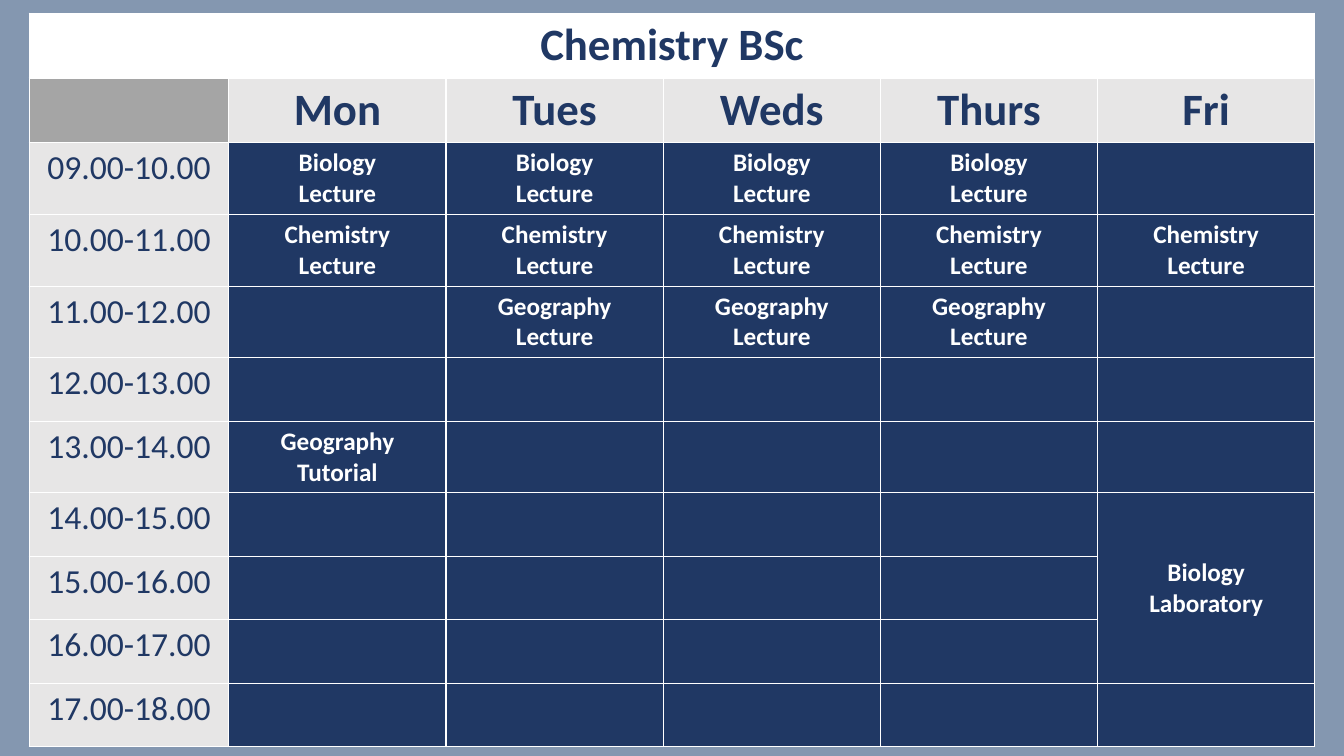
from lxml import etree
from pptx import Presentation
from pptx.dml.color import RGBColor
from pptx.enum.text import MSO_ANCHOR, PP_ALIGN
from pptx.oxml.ns import qn
from pptx.util import Inches, Pt

CENTER = PP_ALIGN.CENTER
MIDDLE = MSO_ANCHOR.MIDDLE
NAVY = RGBColor(0x20, 0x38, 0x64)
WHITE = RGBColor(0xFF, 0xFF, 0xFF)
PALE = RGBColor(0xE7, 0xE6, 0xE6)
GRAY = RGBColor(0xA5, 0xA5, 0xA5)
SLATE = RGBColor(0x84, 0x97, 0xB0)

HEAD = {"size": Pt(32), "bold": True, "color": NAVY}
HOUR = {"size": Pt(24), "bold": False, "color": NAVY}
ITEM = {"size": Pt(18), "bold": True, "color": WHITE}

DAYS = ["Mon", "Tues", "Weds", "Thurs", "Fri"]
START, END = 9, 18
ITEMS = [
    (9, "Biology\nLecture", DAYS[:4]),
    (10, "Chemistry\nLecture", DAYS),
    (11, "Geography\nLecture", DAYS[1:4]),
    (13, "Geography\nTutorial", ["Mon"]),
    (14, "Biology\nLaboratory", ["Fri"]),
]


class Deck:
    """Holds the style and the current slide."""

    def __init__(self, font, back):
        self.font = font
        self.prs = Presentation()
        self.prs.slide_width = Inches(13.33)
        self.prs.slide_height = Inches(7.5)
        self.slide = self.prs.slides.add_slide(self.prs.slide_layouts[6])
        fill = self.slide.background.fill
        fill.solid()
        fill.fore_color.rgb = back

    def table(self, box, cols, rows):
        frame = self.slide.shapes.add_table(len(rows), len(cols), *map(Inches, box))
        grid = frame.table
        grid.first_row = grid.horz_banding = False
        for col, wide in zip(grid.columns, cols):
            col.width = Inches(wide)
        for row, high in zip(grid.rows, rows):
            row.height = Inches(high)
        return grid

    def cell(self, cell, fill, text="", style=ITEM):
        self.border(cell)
        cell.fill.solid()
        cell.fill.fore_color.rgb = fill
        if text:
            cell.text = text
        for para in cell.text_frame.paragraphs:
            para.alignment = CENTER
            for run in para.runs:
                self.format(run.font, style)

    def format(self, font, style):
        font.name = self.font
        for key, value in style.items():
            if key == "color":
                font.color.rgb = value
            else:
                setattr(font, key, value)

    def border(self, cell):
        props = cell._tc.get_or_add_tcPr()
        for side in ("lnL", "lnR", "lnT", "lnB"):
            line = etree.SubElement(props, qn(f"a:{side}"), w=str(Pt(1)))
            fill = etree.SubElement(line, qn("a:solidFill"))
            etree.SubElement(fill, qn("a:srgbClr"), val=str(WHITE))

    def save(self):
        self.prs.save("out.pptx")


def main():
    deck = Deck("Calibri", SLATE)
    hours = range(START, END)
    day_wide = (12.75 - 1.98) / len(DAYS)
    grid = deck.table((0.29, 0.13, 12.75, 7.2),
                      [1.98] + [day_wide] * len(DAYS),
                      [0.6] + [0.63] * (len(hours) + 1))

    plan = {(hour, day): text for hour, text, days in ITEMS for day in days}
    grid.cell(0, 0).merge(grid.cell(0, len(DAYS)))
    for col in range(len(DAYS) + 1):
        deck.cell(grid.cell(0, col), WHITE, "" if col else "Chemistry BSc", HEAD)
    deck.cell(grid.cell(1, 0), GRAY)
    for col, day in enumerate(DAYS, 1):
        deck.cell(grid.cell(1, col), PALE, day, HEAD)

    for row, hour in enumerate(hours, 2):
        deck.cell(grid.cell(row, 0), PALE, f"{hour:02}.00-{hour + 1}.00", HOUR)
        for col, day in enumerate(DAYS, 1):
            deck.cell(grid.cell(row, col), NAVY, plan.get((hour, day), ""))

    lab = grid.cell(14 - START + 2, len(DAYS))
    lab.merge(grid.cell(16 - START + 2, len(DAYS)))
    lab.vertical_anchor = MIDDLE
    deck.save()


if __name__ == "__main__":
    main()
